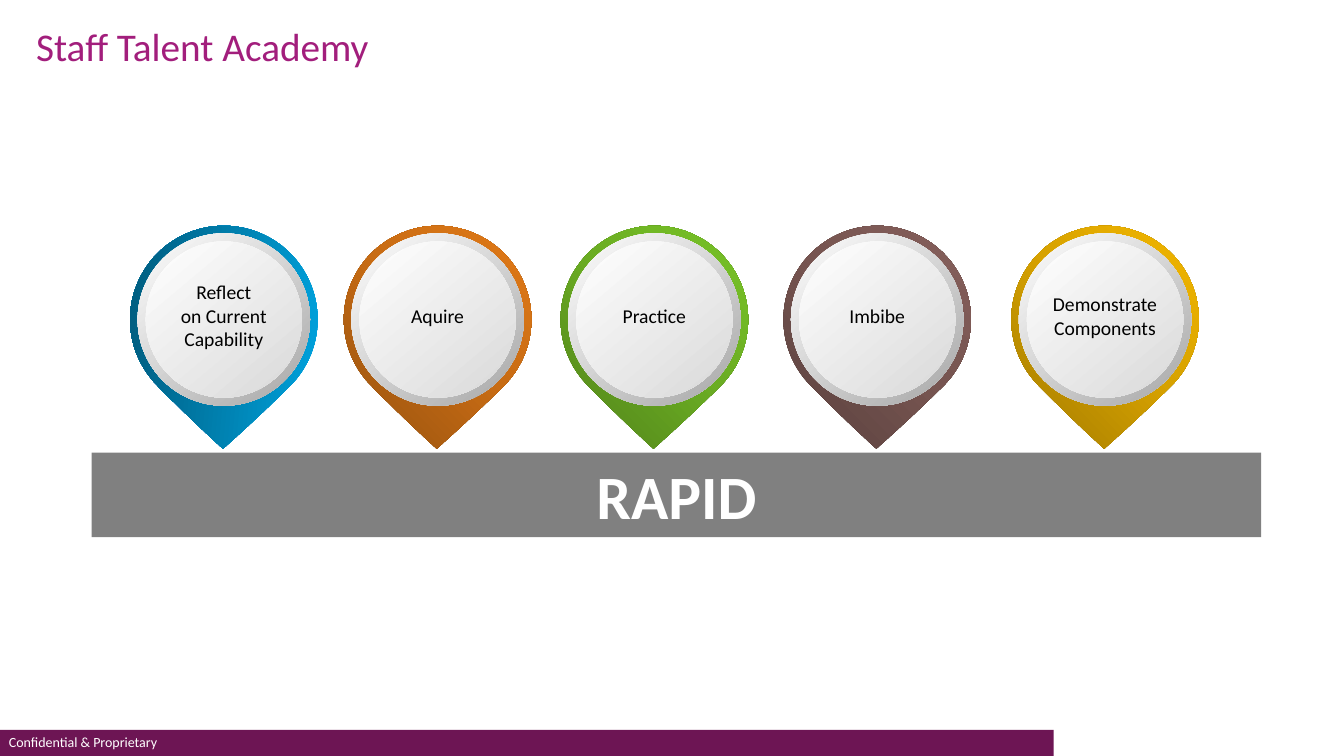
import copy

import pptx
import pptx.dml.color
import pptx.enum.shapes
import pptx.enum.text
import pptx.oxml
import pptx.oxml.ns
import pptx.util

Inches = pptx.util.Inches
SHAPE = pptx.enum.shapes.MSO_SHAPE
ALIGN = pptx.enum.text.PP_ALIGN
ANCHOR = pptx.enum.text.MSO_ANCHOR

COLORS = {
    "title": "A21E7C", "footer": "6D1554", "bar": "808080",
    "white": "FFFFFF", "black": "000000", "rim": "A6A6A6", "face": "D9D9D9",
}
# Label, horizontal centre, gradient colours and gradient angle of each pin
PINS = [
    ("Reflect\von Current\vCapability", 2.22, ("00B0F0", "004D6A"), 50),
    ("Aquire", 4.34, ("8C4C0E", "C86C14", "ED8018"), 180),
    ("Practice", 6.49, ("4B7918", "6BAD23", "7ECD29"), 180),
    ("Imbibe", 8.7, ("533C39", "775551", "8D6560"), 180),
    ("Demonstrate\vComponents", 10.96, ("977200", "D7A200", "FFC000"), 180),
]
PIN_MIDDLE = 3.17
LABEL_MIDDLE = 3.13
LABEL_WIDTH = 2.43
LINE_HEIGHT = 0.235


def rgb(value):
    return pptx.dml.color.RGBColor.from_string(value)


def add_plain_shape(parent, kind, box):
    shape = parent.shapes.add_shape(kind, *map(Inches, box))
    shape.shadow.inherit = False
    shape.line.fill.background()
    return shape


def add_bar(slide, box, color):
    bar = add_plain_shape(slide, SHAPE.RECTANGLE, box)
    bar.fill.solid()
    bar.fill.fore_color.rgb = rgb(color)
    return bar


def fill_gradient(shape, colors, angle):
    """Spread the colours evenly; the angle runs clockwise."""
    shape.fill.gradient()
    shape.fill.gradient_angle = 360 - angle
    stops = shape.element.spPr.find(".//" + pptx.oxml.ns.qn("a:gsLst"))
    stops.clear()
    for index, color in enumerate(colors):
        position = 100000 * index // (len(colors) - 1)
        stops.append(pptx.oxml.parse_xml(
            f'<a:gs {pptx.oxml.ns.nsdecls("a")} pos="{position}">'
            f'<a:srgbClr val="{color}"/></a:gs>'))


def write(shape, text, size, color, align=ALIGN.LEFT, bold=False):
    frame = shape.text_frame
    frame.word_wrap = True
    frame.vertical_anchor = ANCHOR.MIDDLE
    frame.text = text
    paragraph = frame.paragraphs[0]
    paragraph.alignment = align
    font_format = {"name": "Calibri", "size": pptx.util.Pt(size), "bold": bold}
    for run in paragraph.runs:
        for attribute, value in font_format.items():
            setattr(run.font, attribute, value)
        run.font.color.rgb = rgb(color)
    # Line breaks take the same format as the text around them
    run_format = paragraph.runs[0].font._element
    for line_break in frame._txBody.iter(pptx.oxml.ns.qn("a:br")):
        line_break.append(copy.deepcopy(run_format))


def add_text(parent, box, *text_format):
    write(parent.shapes.add_textbox(*map(Inches, box)), *text_format)


def add_pin(slide, label, center, colors, angle):
    pin = slide.shapes.add_group_shape()

    def add_round(kind, size, gradient, gradient_angle):
        box = center - size / 2, PIN_MIDDLE - size / 2, size, size
        part = add_plain_shape(pin, kind, box)
        fill_gradient(part, gradient, gradient_angle)
        return part

    # Coloured drop pointing down, then the rim and the face
    drop = add_round(SHAPE.TEAR, 1.86, colors, angle)
    drop.adjustments[0] = 0.975
    drop.rotation = 135.4
    for size, shade in ((1.71, "rim"), (1.55, "face")):
        add_round(SHAPE.OVAL, size, (COLORS["white"], COLORS[shade]), 50)

    height = 0.1 + LINE_HEIGHT * len(label.split("\v"))
    label_box = (center - LABEL_WIDTH / 2, LABEL_MIDDLE - height / 2,
                 LABEL_WIDTH, height)
    add_text(pin, label_box, label, 14, COLORS["black"], ALIGN.CENTER)


def add_footer(slide, left, top, width, height):
    add_bar(slide, (left, top, width, height), COLORS["footer"])
    add_text(slide, (left - 0.01, top - 0.01, 3.34, 0.27),
             "Confidential & Proprietary", 10, COLORS["white"])


def add_rapid_bar(slide, box):
    write(add_bar(slide, box, COLORS["bar"]), "RAPID", 44, COLORS["white"],
          ALIGN.CENTER, True)


def main():
    deck = pptx.Presentation()
    deck.slide_width, deck.slide_height = Inches(13.33), Inches(7.5)
    slide = deck.slides.add_slide(deck.slide_layouts[6])

    add_footer(slide, 0, 7.24, 10.45, 0.26)
    add_text(slide, (0.26, 0.17, 9.14, 0.57), "Staff Talent Academy", 28,
             COLORS["title"])
    for pin in PINS:
        add_pin(slide, *pin)
    add_rapid_bar(slide, (0.91, 4.49, 11.6, 0.84))

    deck.save("out.pptx")


if __name__ == "__main__":
    main()
